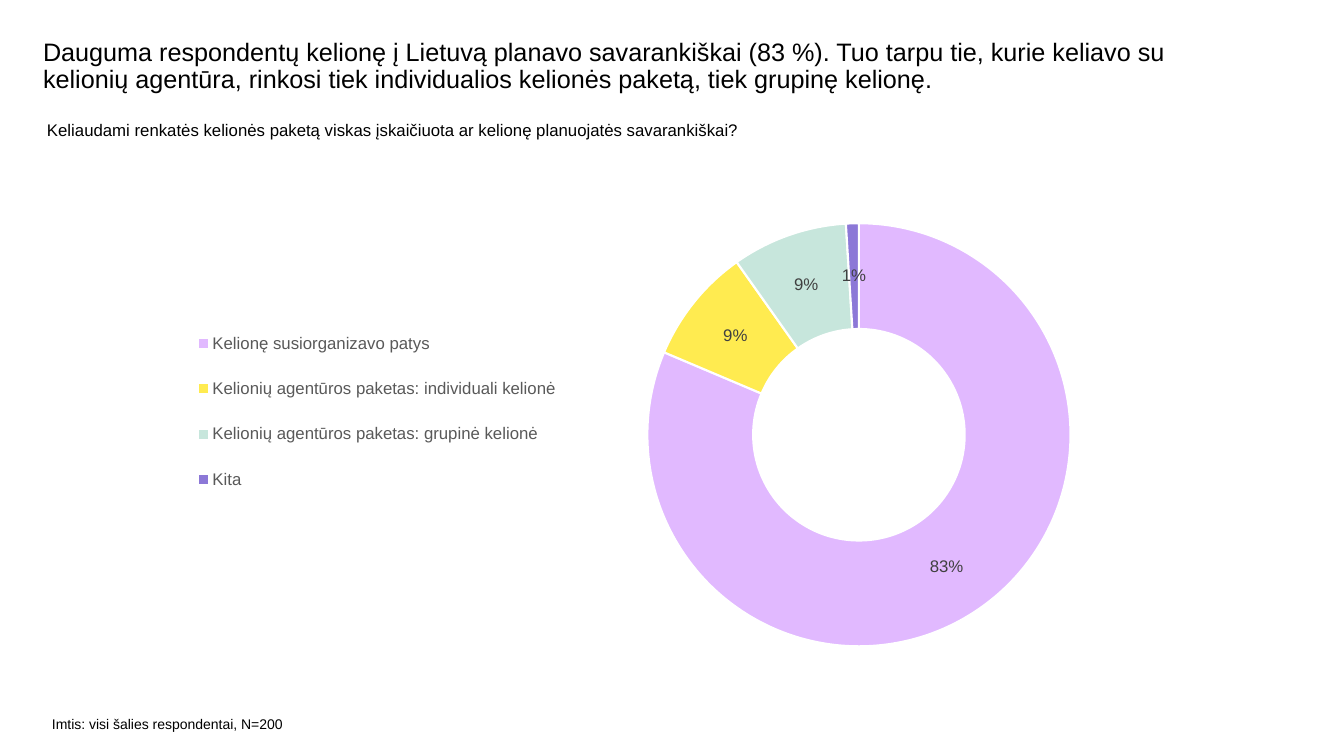
from lxml.etree import SubElement
from pptx import Presentation
from pptx.chart.data import CategoryChartData as ChartData
from pptx.dml.color import RGBColor
from pptx.enum.chart import XL_CHART_TYPE as ChartType, XL_LEGEND_POSITION as LegendPos
from pptx.oxml import parse_xml
from pptx.oxml.ns import nsdecls, qn
from pptx.util import Emu, Pt

PX = 914400 / 100.8


def px(n):
    return Emu(round(n * PX))


def color(value):
    return RGBColor.from_string(value)


def style_font(font, size, fill="000000", name="Arial"):
    font.name = name
    font.size = Pt(size)
    font.bold = False
    font.color.rgb = color(fill)


def write(tf, text, size=12, fill="000000", spacing=None):
    p = tf.paragraphs[0]
    p.line_spacing = spacing
    r = p.add_run()
    r.text = text
    style_font(r.font, size, fill)


def set_layout(parent, index, inner=False, **box):
    for old in parent.findall(qn("c:layout")):
        parent.remove(old)
    layout = parse_xml(f"<c:layout {nsdecls('c')}><c:manualLayout/></c:layout>")
    manual = layout[0]
    if inner:
        SubElement(manual, qn("c:layoutTarget")).set("val", "inner")
    for axis in "xy":
        SubElement(manual, qn(f"c:{axis}Mode")).set("val", "edge")
    for key in "xywh":
        SubElement(manual, qn(f"c:{key}")).set("val", str(box[key]))
    parent.insert(index, layout)


class Deck:
    def __init__(self, width, height):
        self.prs = Presentation()
        self.prs.slide_width, self.prs.slide_height = px(width), px(height)
        self.s = self.prs.slides.add_slide(self.prs.slide_layouts[6])

    def text(self, x, y, w, h, content, **fmt):
        tf = self.s.shapes.add_textbox(px(x), px(y), px(w), px(h)).text_frame
        tf.word_wrap = True
        tf.margin_left = tf.margin_right = tf.margin_top = tf.margin_bottom = 0
        write(tf, content, **fmt)

    def doughnut(self, x, y, w, h, slices):
        data = ChartData(number_format="0%")
        data.categories = [name for name, _, _ in slices]
        data.add_series("Series 1", [value for _, value, _ in slices])
        chart = self.s.shapes.add_chart(
            ChartType.DOUGHNUT, px(x), px(y), px(w), px(h), data).chart
        chart.has_title = False
        style_font(chart.font, 10)
        plot = chart.plots[0]
        plot.vary_by_categories = True

        for i, (_, _, fill) in enumerate(slices):
            fmt = plot.series[0].points[i].format
            fmt.fill.solid()
            fmt.fill.fore_color.rgb = color(fill)
            fmt.line.color.rgb = color("FFFFFF")
            fmt.line.width = Pt(1.5)

        labels = plot.series[0].data_labels
        style_font(labels.font, 12, "404040")
        labels.number_format = "0%"
        labels.number_format_is_linked = False
        labels.show_value = True
        labels.show_percentage = False

        chart.has_legend = True
        legend = chart.legend
        legend.position = LegendPos.BOTTOM
        legend.include_in_layout = False
        style_font(legend.font, 12, "595959")

        root = chart.element
        set_layout(root.find(".//" + qn("c:plotArea")), 0, inner=True,
                   x=0.51, y=0.05, w=0.48, h=0.91)
        set_layout(root.find(".//" + qn("c:legend")), 1,
                   x=0, y=0.23, w=0.42, h=0.45)


def main():
    deck = Deck(1344, 756)
    deck.text(43, 40, 1134, 60,
              "Dauguma respondentų kelionę į Lietuvą planavo savarankiškai (83 %). "
              "Tuo tarpu tie, kurie keliavo su kelionių agentūra, rinkosi tiek "
              "individualios kelionės paketą, tiek grupinę kelionę.",
              size=18, spacing=0.9)
    deck.text(47, 120, 1199, 61,
              "Keliaudami renkatės kelionės paketą viskas įskaičiuota "
              "ar kelionę planuojatės savarankiškai?")
    deck.text(52, 715, 255, 24, "Imtis: visi šalies respondentai, N=200", size=10)
    deck.doughnut(190, 200, 892, 465, [
        ("Kelionę susiorganizavo patys", 0.83, "E1B9FF"),
        ("Kelionių agentūros paketas: individuali kelionė", 0.09, "FFEB50"),
        ("Kelionių agentūros paketas: grupinė kelionė", 0.09, "C7E6DC"),
        ("Kita", 0.01, "8C78D7"),
    ])
    deck.prs.save("out.pptx")


if __name__ == "__main__":
    main()
